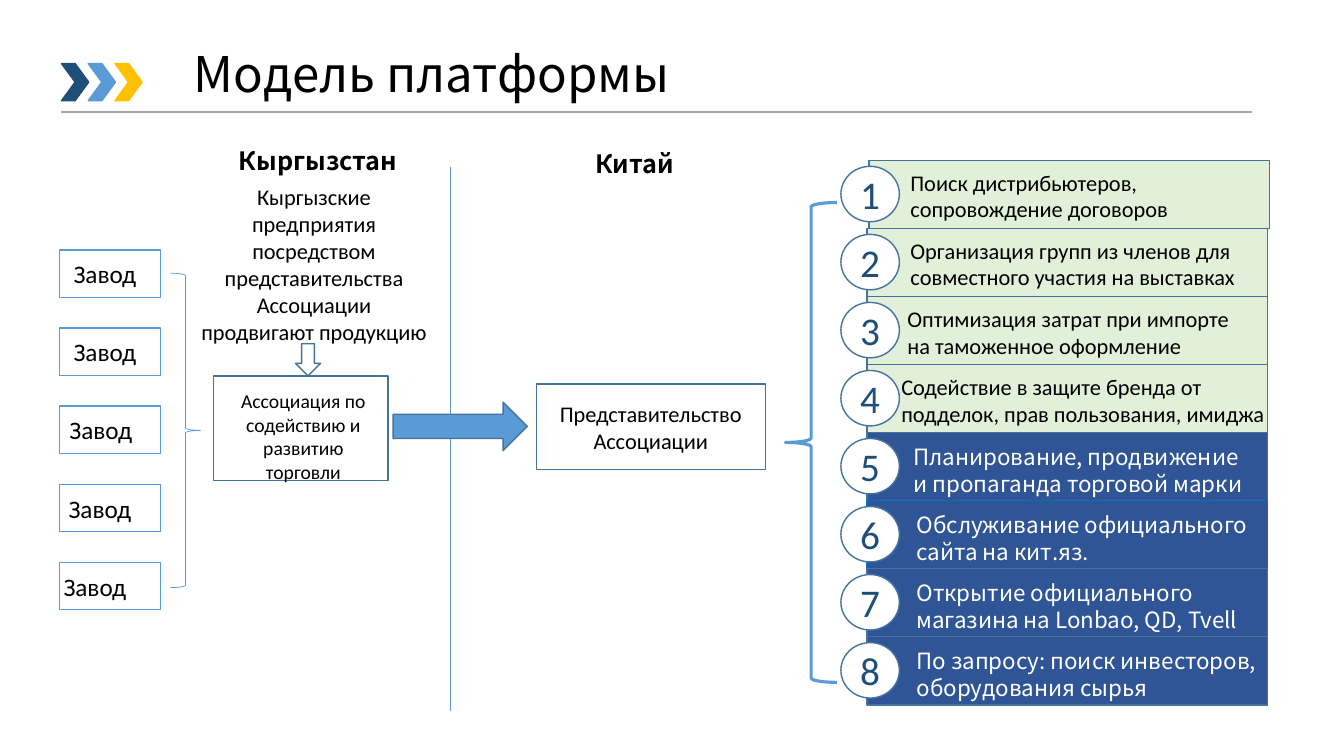
from lxml import etree
from pptx import Presentation
from pptx import util as u
from pptx.dml.color import RGBColor
from pptx.enum import shapes, text
from pptx.oxml.ns import qn

BLACK = RGBColor(0x00, 0x00, 0x00)
WHITE = RGBColor(0xFF, 0xFF, 0xFF)
NAVY = RGBColor(0x1F, 0x4E, 0x79)
BLUE = RGBColor(0x5B, 0x9B, 0xD5)
STEEL = RGBColor(0x43, 0x73, 0x9E)
GOLD = RGBColor(0xFF, 0xC0, 0x00)
GREY = RGBColor(0xA6, 0xA6, 0xA6)
GREEN = RGBColor(0xE2, 0xF0, 0xD9)
DEEP = RGBColor(0x2F, 0x55, 0x97)
AZURE = RGBColor(0x00, 0x70, 0xC0)
SANS, NOTO = "Calibri", "Noto Sans CJK SC"
LEFT, MID = text.PP_ALIGN.LEFT, text.PP_ALIGN.CENTER
KIND = shapes.MSO_SHAPE

deck = Presentation()
deck.slide_width, deck.slide_height = u.Inches(13.33), u.Inches(7.5)
slide = deck.slides.add_slide(deck.slide_layouts[5])


def draw(kind, at, fill, line, width=1):
    shape = slide.shapes.add_shape(kind, *map(u.Inches, at))
    shape.shadow.inherit = False
    if fill is None:
        shape.fill.background()
    else:
        shape.fill.solid()
        shape.fill.fore_color.rgb = fill
    shape.line.color.rgb = line
    shape.line.width = u.Pt(width)
    return shape


def write(shape, words, size, face=SANS, color=BLACK, align=MID,
          inset=(0, 0, 0, 0), anchor=text.MSO_ANCHOR.MIDDLE):
    frame = shape.text_frame
    frame.word_wrap = True
    frame.auto_size = text.MSO_AUTO_SIZE.NONE
    frame.vertical_anchor = anchor
    (frame.margin_left, frame.margin_top,
     frame.margin_right, frame.margin_bottom) = map(u.Inches, inset)
    para = frame.paragraphs[0]
    para.text = words
    para.alignment = align
    para.font.size = u.Pt(size)
    para.font.name = face
    para.font.color.rgb = color
    return para


# Title
title = slide.shapes.title
title.left, title.top, title.width, title.height = map(
    u.Inches, (1.82, 0.4, 9.09, 0.71))
head = write(title, "Модель платформы", 35.1, NOTO, align=LEFT,
             inset=(0.1, 0.05, 0.1, 0.05))
head.line_spacing = 0.9

# Chevrons beside the title
for col, color in enumerate((NAVY, BLUE, GOLD)):
    draw(KIND.CHEVRON, (0.61 + 0.265 * col, 0.63, 0.27, 0.37), color, color)

# Title rule and border between the countries
for ends, color, width in (((0.61, 1.11, 12.42, 1.11), GREY, 1.5),
                           ((4.47, 1.66, 4.47, 7.05), BLUE, 0.5)):
    rule = slide.shapes.add_connector(
        shapes.MSO_CONNECTOR.STRAIGHT, *map(u.Inches, ends))
    rule.line.color.rgb = color
    rule.line.width = u.Pt(width)
    etree.SubElement(rule._element.spPr, qn("a:effectLst"))

# Country headings and the note
for words, at, size, face, bold in (
        ("Кыргызстан", (2.26, 1.39, 1.79, 0.4), 18, NOTO, True),
        ("Китай", (5.8, 1.42, 0.99, 0.4), 18, NOTO, True),
        ("Кыргызские предприятия посредством представительства "
         "Ассоциации продвигают продукцию",
         (1.98, 1.76, 2.27, 1.72), 16, SANS, False)):
    label = slide.shapes.add_textbox(*map(u.Inches, at))
    write(label, words, size, face).font.bold = bold

# Factories
for row, indent in enumerate((0.14, 0.14, 0.1, 0.09, 0.04)):
    plant = draw(KIND.RECTANGLE, (0.59, 2.48 + 0.775 * row, 1, 0.47), WHITE, BLUE)
    write(plant, "Завод", 18, align=LEFT, inset=(indent, 0, 0, 0))

# Association and its office
union = draw(KIND.RECTANGLE, (2.12, 3.73, 1.73, 1.04), WHITE, STEEL)
write(union, "Ассоциация по содействию и развитию торговли", 14,
      inset=(0.2, 0.13, 0.15, 0), anchor=text.MSO_ANCHOR.TOP)
office = draw(KIND.RECTANGLE, (5.32, 3.81, 2.27, 0.85), WHITE, STEEL)
write(office, "Представительство Ассоциации", 16, inset=(0.15, 0, 0.15, 0))

# Braces and arrows
draw(KIND.RIGHT_BRACE, (1.69, 2.71, 0.3, 3.12), None, BLUE, 0.5)
draw(KIND.LEFT_BRACE, (7.79, 2.01, 0.51, 4.76), None, BLUE, 2.25)
draw(KIND.DOWN_ARROW, (2.93, 3.41, 0.25, 0.32), WHITE, STEEL)
draw(KIND.RIGHT_ARROW, (3.9, 3.99, 1.33, 0.48), BLUE, STEEL)

# Numbered services: four green rows, then four blue ones
tasks = (
    ("Поиск дистрибьютеров,\vсопровождение договоров", 0.41),
    ("Организация групп из членов для\vсовместного участия на выставках", 0.43),
    ("Оптимизация затрат при импорте\vна таможенное оформление", 0.4),
    ("Содействие в защите бренда от\vподделок, прав пользования, имиджа", 0.34),
    ("Планирование, продвижение\vи пропаганда торговой марки", 0.46),
    ("Обслуживание официального\vсайта на кит.яз.", 0.49),
    ("Открытие официального\vмагазина на Lonbao, QD, Tvell", 0.49),
    ("По запросу: поиск инвесторов,\vоборудования сырья", 0.49),
)
STEP = 0.675
for row, (words, indent) in enumerate(tasks):
    top = 1.59 + STEP * row
    dark = row >= 4
    bar = draw(KIND.RECTANGLE, (8.6 if row else 8.62, top, 3.97, 0.68),
               DEEP if dark else GREEN, AZURE if row == 5 else STEEL)
    para = write(bar, words, 16, NOTO if dark else SANS,
                 WHITE if dark else BLACK, LEFT,
                 (indent, 0.06 if dark else 0.02, 0, 0))
    if dark:
        para.line_spacing = u.Pt(19.3)
    badge = draw(KIND.OVAL, (8.34, top + 0.06, 0.58, 0.55), WHITE, STEEL)
    write(badge, str(row + 1), 28, color=NAVY)

deck.save("out.pptx")
